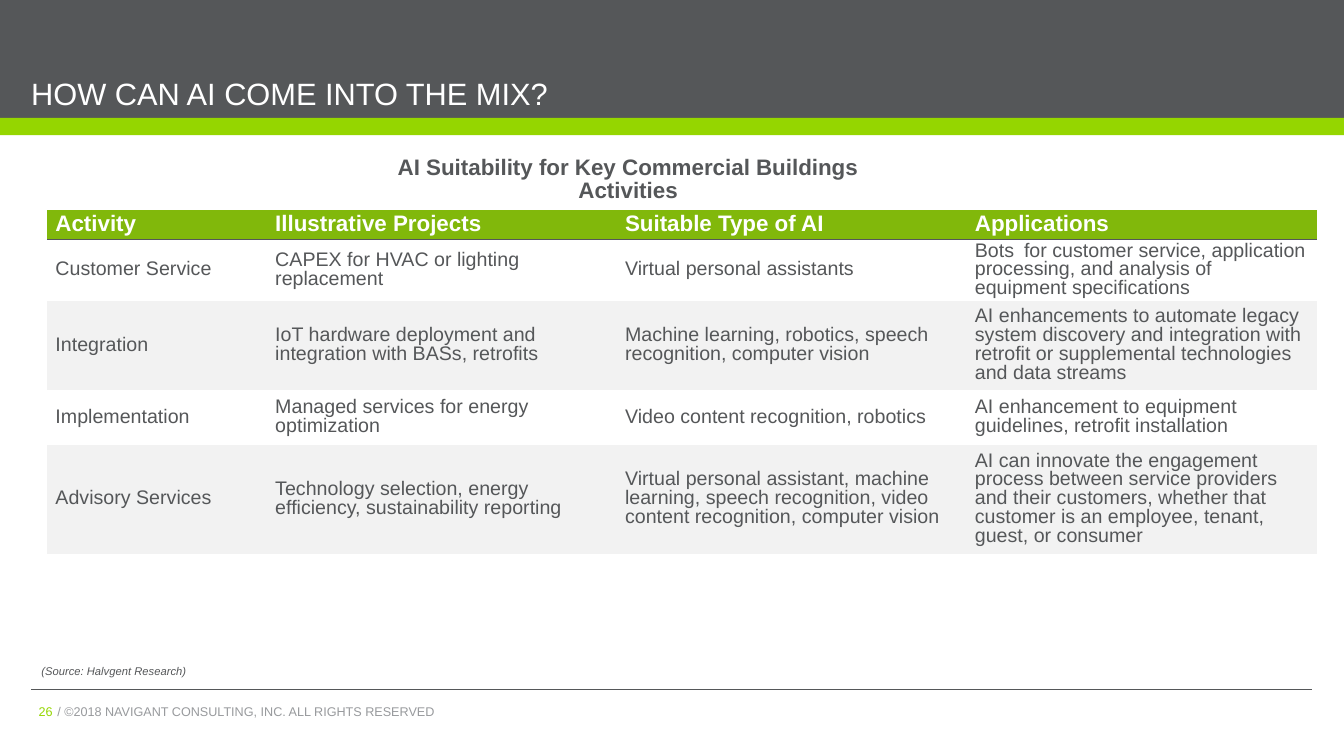
from pptx import Presentation
from pptx.dml.color import RGBColor
from pptx.enum.shapes import MSO_CONNECTOR, MSO_SHAPE
from pptx.enum.text import MSO_ANCHOR, MSO_AUTO_SIZE, PP_ALIGN
from pptx.oxml.ns import qn
from pptx.util import Inches, Pt
from lxml import etree

RECTANGLE = MSO_SHAPE.RECTANGLE
STRAIGHT = MSO_CONNECTOR.STRAIGHT
MIDDLE = MSO_ANCHOR.MIDDLE
BOTTOM = MSO_ANCHOR.BOTTOM
FIT_SHAPE = MSO_AUTO_SIZE.SHAPE_TO_FIT_TEXT
NO_FIT = MSO_AUTO_SIZE.NONE
LEFT = PP_ALIGN.LEFT
CENTER = PP_ALIGN.CENTER
RIGHT = PP_ALIGN.RIGHT
JUSTIFY = PP_ALIGN.JUSTIFY

COLORS = {
    "slate": "555759",
    "lime": "95D600",
    "header": "81B80B",
    "band": "F2F2F2",
    "footer": "989A9D",
    "white": "FFFFFF",
}
PLAIN_TABLE = "{2D5ABB26-0587-4C30-8999-92F81FD0307C}"
COLUMN_WIDTHS = [2.18, 3.47, 3.47, 3.47]
ROW_HEIGHTS = [0.3, 0.54, 0.89, 0.54, 1.08]
HEADINGS = ["Activity", "Illustrative Projects", "Suitable Type of AI", "Applications"]
ACTIVITIES = [
    ["Customer Service",
     "CAPEX for HVAC or lighting replacement",
     "Virtual personal assistants",
     ("Bots ", " ", "for customer service, application processing, "
      "and analysis of equipment specifications")],
    ["Integration",
     "IoT hardware deployment and integration with BASs, retrofits",
     "Machine learning, robotics, speech recognition, computer vision",
     ("AI enhancements to automate legacy system discovery and integration "
      "with retrofit or supplemental technologies", " ", " and data streams")],
    ["Implementation",
     "Managed services for energy optimization",
     "Video content recognition, robotics",
     "AI enhancement to equipment guidelines, retrofit installation"],
    ["Advisory Services",
     "Technology selection, energy efficiency, sustainability reporting",
     "Virtual personal assistant, machine learning, speech recognition, "
     "video content recognition, computer vision",
     "AI can innovate the engagement process between service providers and their "
     "customers, whether that customer is an employee, tenant, guest, or consumer"],
]


def rgb(name):
    return RGBColor.from_string(COLORS[name])


class SlideBuilder:
    font = "Arial"
    spacing = 0.86

    def __init__(self, page):
        self.page = page
        self.shapes = page.shapes

    def add_span(self, para, text, size, color, bold=False, italic=False):
        span = para.add_run()
        span.text = text
        span.font.name = self.font
        span.font.size = Pt(size)
        span.font.bold = bold
        span.font.italic = italic
        span.font.color.rgb = rgb(color)

    def bar(self, top, height, color):
        box = self.shapes.add_shape(
            RECTANGLE, 0, Inches(top), Inches(13.33), Inches(height))
        box.shadow.inherit = False
        box.fill.solid()
        box.fill.fore_color.rgb = rgb(color)
        box.line.fill.background()

    def rule(self, left, right, top):
        line = self.shapes.add_connector(
            STRAIGHT, Inches(left), Inches(top), Inches(right), Inches(top))
        line.line.color.rgb = rgb("slate")
        line.line.width = Pt(0.75)
        etree.SubElement(line._element.spPr, qn("a:effectLst"))

    def title(self, text, left, top, width, height):
        box = self.shapes.title
        self.shapes._spTree.append(box._element)
        box.left, box.top = Inches(left), Inches(top)
        box.width, box.height = Inches(width), Inches(height)
        frame = box.text_frame
        frame.margin_left = frame.margin_right = 0
        frame.margin_top = frame.margin_bottom = 0
        frame.vertical_anchor = BOTTOM
        frame.auto_size = NO_FIT
        para = frame.paragraphs[0]
        para.alignment = LEFT
        self.add_span(para, text, 22, "white")

    def label(self, text, area, size, color, align, grow=False, **style):
        box = self.shapes.add_textbox(*[Inches(length) for length in area])
        frame = box.text_frame
        frame.word_wrap = not grow
        frame.auto_size = FIT_SHAPE if grow else NO_FIT
        para = frame.paragraphs[0]
        para.alignment = align
        para.line_spacing = self.spacing
        self.add_span(para, text, size, color, **style)

    def cell(self, cell, content, align, fill, header):
        cell.margin_left = cell.margin_right = Inches(0.08)
        cell.margin_top = cell.margin_bottom = 0
        cell.vertical_anchor = MIDDLE
        para = cell.text_frame.paragraphs[0]
        para.alignment = align
        para.line_spacing = self.spacing
        if header:
            self.add_span(para, content, 16, "white", bold=True)
            self.border(cell, "a:lnB")
        else:
            para.space_after = Pt(2)
            pieces = (content,) if isinstance(content, str) else content
            for piece in pieces:
                self.add_span(para, piece, 14 if piece.strip() else 11, "slate")
        if fill:
            cell.fill.solid()
            cell.fill.fore_color.rgb = rgb(fill)
        else:
            cell.fill.background()

    def border(self, cell, side):
        properties = cell._tc.get_or_add_tcPr()
        line = etree.SubElement(properties, qn(side), w=str(Pt(1)))
        solid = etree.SubElement(line, qn("a:solidFill"))
        etree.SubElement(solid, qn("a:srgbClr"), val=COLORS["slate"])

    def table(self, rows, left, top):
        frame = self.shapes.add_table(
            len(rows), len(COLUMN_WIDTHS), Inches(left), Inches(top),
            Inches(sum(COLUMN_WIDTHS)), Inches(sum(ROW_HEIGHTS)))
        table = frame.table
        table.horz_banding = False
        table._tbl.tblPr.find(qn("a:tableStyleId")).text = PLAIN_TABLE
        for column, width in zip(table.columns, COLUMN_WIDTHS):
            column.width = Inches(width)
        for index, (row, height) in enumerate(zip(rows, ROW_HEIGHTS)):
            table.rows[index].height = Inches(height)
            header = index == 0
            fill = "header" if header else "band" if index % 2 == 0 else None
            for position, content in enumerate(row):
                align = JUSTIFY if position == 0 else LEFT
                self.cell(table.cell(index, position), content, align, fill, header)


def main():
    deck = Presentation()
    deck.slide_width, deck.slide_height = Inches(13.33), Inches(7.5)
    builder = SlideBuilder(deck.slides.add_slide(deck.slide_layouts[5]))
    builder.bar(0, 1.17, "slate")
    builder.bar(1.17, 0.17, "lime")
    builder.rule(0.31, 13.01, 6.84)
    builder.label("/ ©2018 NAVIGANT CONSULTING, INC. ALL RIGHTS RESERVED",
                  (0.47, 6.96, 6.37, 0.22), 9, "footer", LEFT)
    builder.label("26", (0.18, 6.96, 0.44, 0.23), 9, "lime", RIGHT)
    builder.title("HOW CAN AI COME INTO THE MIX?", 0.31, 0, 12.71, 1.11)
    builder.label("AI Suitability for Key Commercial Buildings Activities",
                  (3.33, 1.51, 5.8, 0.33), 16, "slate", CENTER, grow=True, bold=True)
    builder.label("(Source: Halvgent Research)",
                  (0.31, 6.56, 1.64, 0.24), 8, "slate", CENTER, grow=True, italic=True)
    builder.table([HEADINGS] + ACTIVITIES, 0.47, 2.08)
    deck.save("out.pptx")


if __name__ == "__main__":
    main()
